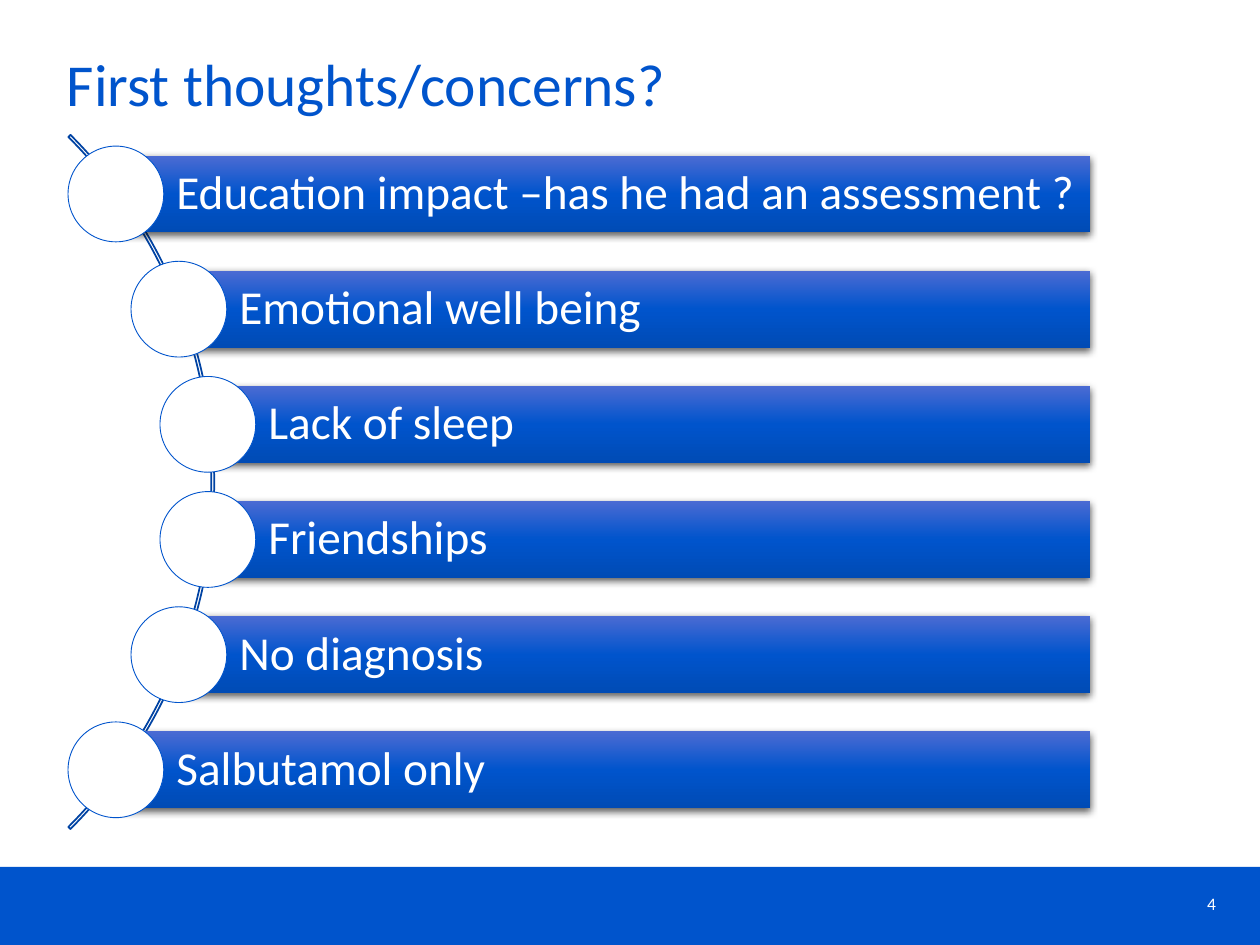
from copy import deepcopy
from lxml.etree import SubElement
from pptx import Presentation
from pptx.dml.color import RGBColor
from pptx.enum.shapes import MSO_SHAPE as Shape
from pptx.enum.text import MSO_ANCHOR as Anchor, MSO_AUTO_SIZE as AutoSize, PP_ALIGN as Align
from pptx.oxml.ns import qn
from pptx.util import Inches, Pt

TITLE = "First thoughts/concerns?"
CONCERNS = [
    ("Education impact –has he had an assessment ?", 0.92),
    ("Emotional well being", 1.42),
    ("Lack of sleep", 1.65),
    ("Friendships", 1.65),
    ("No diagnosis", 1.42),
    ("Salbutamol only", 0.92),
]
PAGE_NUMBER = "4"
BLUE, DARK_BLUE, WHITE = "0054CC", "0043A3", "FFFFFF"
GRADIENT = [(0, "4B6BD3"), (0.5, BLUE), (1, "004BB5")]

WIDTH, HEIGHT = 10, 7.5
BAND_TOP = 6.88
FIRST_CENTRE, PITCH = 1.54, 0.914
BAR_RIGHT, BAR_HEIGHT, CIRCLE = 8.65, 0.61, 0.76
ARC_LEFT, ARC_TOP, ARC_SIZE = -6.09, -0.07, 7.79


def colour(value):
    return RGBColor.from_string(value)


def add_shape(kind, left, top, width, height, fill=None, line=None, weight=1):
    shape = page.shapes.add_shape(kind, *map(Inches, (left, top, width, height)))
    shape.shadow.inherit = False
    if fill:
        shape.fill.solid()
        shape.fill.fore_color.rgb = colour(fill)
    else:
        shape.fill.background()
    if line:
        shape.line.color.rgb = colour(line)
        shape.line.width = Pt(weight)
    else:
        shape.line.fill.background()
    return shape


def write(box, text, size, value, align, insets, anchor):
    frame = box.text_frame
    frame.word_wrap = True
    frame.auto_size = AutoSize.NONE
    frame.vertical_anchor = anchor
    (frame.margin_left, frame.margin_top,
     frame.margin_right, frame.margin_bottom) = map(Inches, insets)
    para = frame.paragraphs[0]
    para.text = text
    para.alignment = align
    para.line_spacing = 0.9
    para.font.size = Pt(size)
    para.font.name = "Calibri"
    para.font.color.rgb = colour(value)


def shade(bar):
    bar.fill.gradient()
    bar.fill.gradient_angle = 270
    stops = bar._element.spPr.find(".//" + qn("a:gsLst"))
    stops.append(deepcopy(stops[0]))
    for stop, (position, value) in zip(bar.fill.gradient_stops, GRADIENT):
        stop.position = position
        stop.color.rgb = colour(value)


def cast_shadow(bar):
    effects = bar._element.spPr.find(qn("a:effectLst"))
    shadow = SubElement(effects, qn("a:outerShdw"), blurRad=str(Pt(4.5)),
                        dist=str(Pt(1.5)), dir="5400000", algn="ctr", rotWithShape="0")
    tint = SubElement(shadow, qn("a:srgbClr"), val="000000")
    SubElement(tint, qn("a:alpha"), val="63000")


deck = Presentation()
deck.slide_width, deck.slide_height = Inches(WIDTH), Inches(HEIGHT)
page = deck.slides.add_slide(deck.slide_layouts[5])

add_shape(Shape.RECTANGLE, 0, BAND_TOP, WIDTH, HEIGHT - BAND_TOP, BLUE)
number = page.shapes.add_textbox(*map(Inches, (8.72, 7.06, 1.03, 0.27)))
write(number, PAGE_NUMBER, 10, WHITE, Align.RIGHT, (0.1, 0.05, 0.1, 0.05), Anchor.TOP)

title = page.shapes.title
title.left, title.top, title.width, title.height = map(Inches, (0.46, 0.4, 8.86, 1.06))
write(title, TITLE, 34, BLUE, Align.LEFT, (0.07, 0.04, 0.07, 0.04), Anchor.TOP)

arc = add_shape(Shape.BLOCK_ARC, ARC_LEFT, ARC_TOP, ARC_SIZE, ARC_SIZE, line=DARK_BLUE)
for index, value in enumerate((189, 27, 0.003)):
    arc.adjustments[index] = value

for row, (text, left) in enumerate(CONCERNS):
    centre = FIRST_CENTRE + row * PITCH
    bar = add_shape(Shape.RECTANGLE, left, centre - BAR_HEIGHT / 2,
                    BAR_RIGHT - left, BAR_HEIGHT)
    shade(bar)
    cast_shadow(bar)
    write(bar, text, 27, WHITE, Align.LEFT, (0.48, 0.07, 0.07, 0.07), Anchor.MIDDLE)
    add_shape(Shape.OVAL, left - CIRCLE / 2, centre - CIRCLE / 2,
              CIRCLE, CIRCLE, WHITE, BLUE, 0.5)

deck.save("out.pptx")
